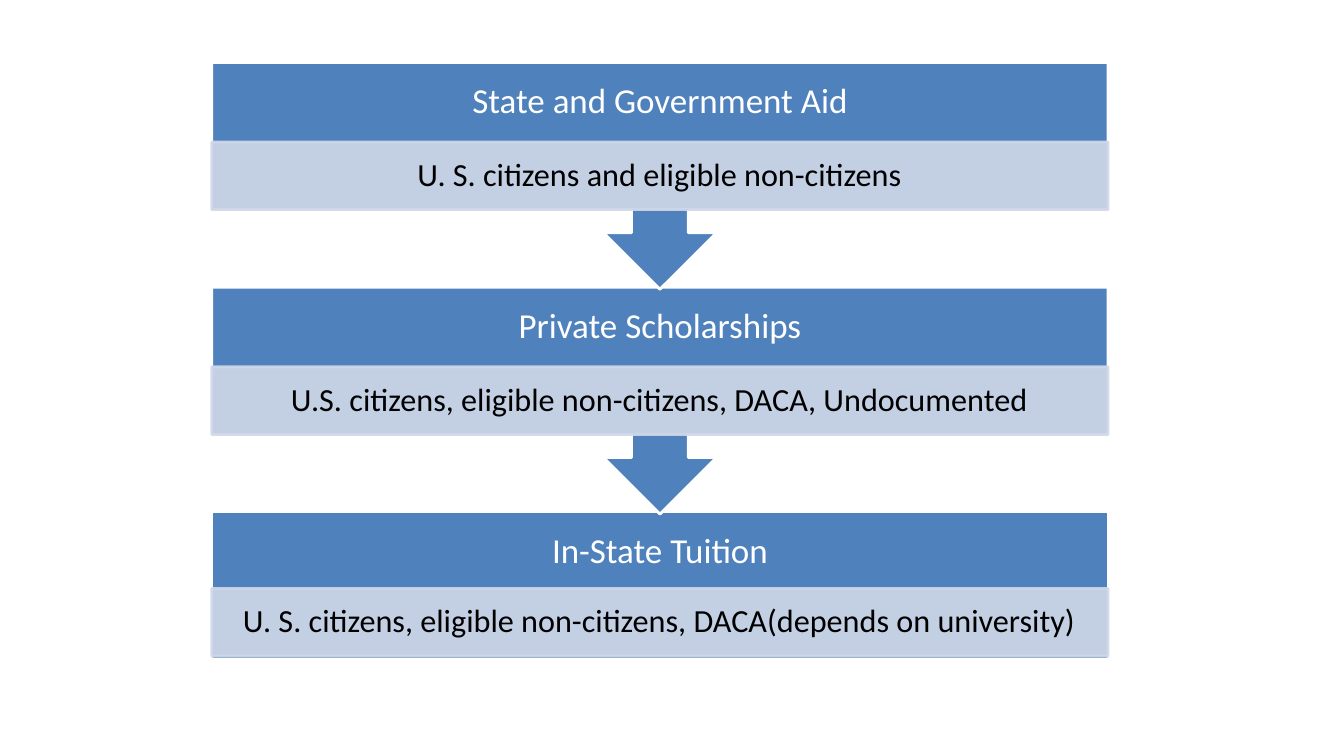
"""Build a slide with a three-stage flow of aid types and who may receive them."""
from dataclasses import dataclass

from lxml.etree import SubElement
from pptx import Presentation
from pptx.dml.color import RGBColor
from pptx.enum.shapes import MSO_SHAPE as Preset
from pptx.enum.text import MSO_ANCHOR as Anchor, PP_ALIGN as Align
from pptx.oxml.ns import qn
from pptx.shapes.autoshape import Shape
from pptx.slide import Slide
from pptx.util import Emu, Pt

EMU_PER_PX = 9144


@dataclass(frozen=True)
class Theme:
    font: str = "Calibri"
    heading_size: int = 25
    band_size: int = 23
    line_width: int = 2
    band_opacity: int = 90
    blue: RGBColor = RGBColor(0x4F, 0x81, 0xBD)
    pale: RGBColor = RGBColor(0xD0, 0xD8, 0xE8)
    white: RGBColor = RGBColor(0xFF, 0xFF, 0xFF)
    black: RGBColor = RGBColor(0x00, 0x00, 0x00)


@dataclass(frozen=True)
class Box:
    left: int
    top: int
    width: int
    height: int

    def emu(self) -> tuple[Emu, Emu, Emu, Emu]:
        return px(self.left), px(self.top), px(self.width), px(self.height)


@dataclass(frozen=True)
class Stage:
    heading: str
    recipients: str
    preset: Preset = Preset.UP_ARROW_CALLOUT
    rotation: int = 180
    height: int = 225
    band_offset: int = 79


THEME = Theme()
LEFT, WIDTH = 210, 889
FIRST_TOP, PITCH = 62, 223
HEADING_HEIGHT, BAND_HEIGHT = 79, 67
STAGES = (
    Stage("State and Government Aid", "U. S. citizens and eligible non-citizens"),
    Stage("Private Scholarships", "U.S. citizens, eligible non-citizens, DACA, Undocumented"),
    Stage(
        "In-State Tuition",
        "U. S. citizens, eligible non-citizens, DACA(depends on university)",
        preset=Preset.RECTANGLE,
        rotation=0,
        height=146,
        band_offset=76,
    ),
)


def px(length: int) -> Emu:
    return Emu(length * EMU_PER_PX)


def add_panel(slide: Slide, preset: Preset, box: Box, fill: RGBColor, line: RGBColor) -> Shape:
    shape = slide.shapes.add_shape(preset, *box.emu())
    shape.shadow.inherit = False
    shape.fill.solid()
    shape.fill.fore_color.rgb = fill
    shape.line.color.rgb = line
    shape.line.width = Pt(THEME.line_width)
    return shape


def set_opacity(shape: Shape, percent: int) -> None:
    for color in shape.element.spPr.iter(qn("a:srgbClr")):
        SubElement(color, qn("a:alpha"), val=str(percent * 1000))


def write(shape: Shape, text: str, size: int, color: RGBColor, side: int, edge: int) -> None:
    frame = shape.text_frame
    frame.text = text
    frame.word_wrap = True
    frame.vertical_anchor = Anchor.MIDDLE
    frame.margin_left = frame.margin_right = px(side)
    frame.margin_top = frame.margin_bottom = px(edge)
    paragraph = frame.paragraphs[0]
    paragraph.alignment = Align.CENTER
    paragraph.line_spacing = 0.9
    font = paragraph.runs[0].font
    font.name = THEME.font
    font.size = Pt(size)
    font.color.rgb = color


def add_stage(slide: Slide, stage: Stage, top: int) -> None:
    panel_box = Box(LEFT, top, WIDTH, stage.height)
    panel = add_panel(slide, stage.preset, panel_box, THEME.blue, THEME.white)
    panel.rotation = stage.rotation

    heading = slide.shapes.add_textbox(*Box(LEFT, top, WIDTH, HEADING_HEIGHT).emu())
    write(heading, stage.heading, THEME.heading_size, THEME.white, side=19, edge=19)

    band_box = Box(LEFT, top + stage.band_offset, WIDTH, BAND_HEIGHT)
    band = add_panel(slide, Preset.RECTANGLE, band_box, THEME.pale, THEME.pale)
    set_opacity(band, THEME.band_opacity)
    write(band, stage.recipients, THEME.band_size, THEME.black, side=18, edge=3)


def main() -> None:
    presentation = Presentation()
    presentation.slide_width, presentation.slide_height = px(1333), px(750)
    slide = presentation.slides.add_slide(presentation.slide_layouts[6])
    for index, stage in reversed(list(enumerate(STAGES))):
        add_stage(slide, stage, FIRST_TOP + index * PITCH)
    presentation.save("out.pptx")


if __name__ == "__main__":
    main()
